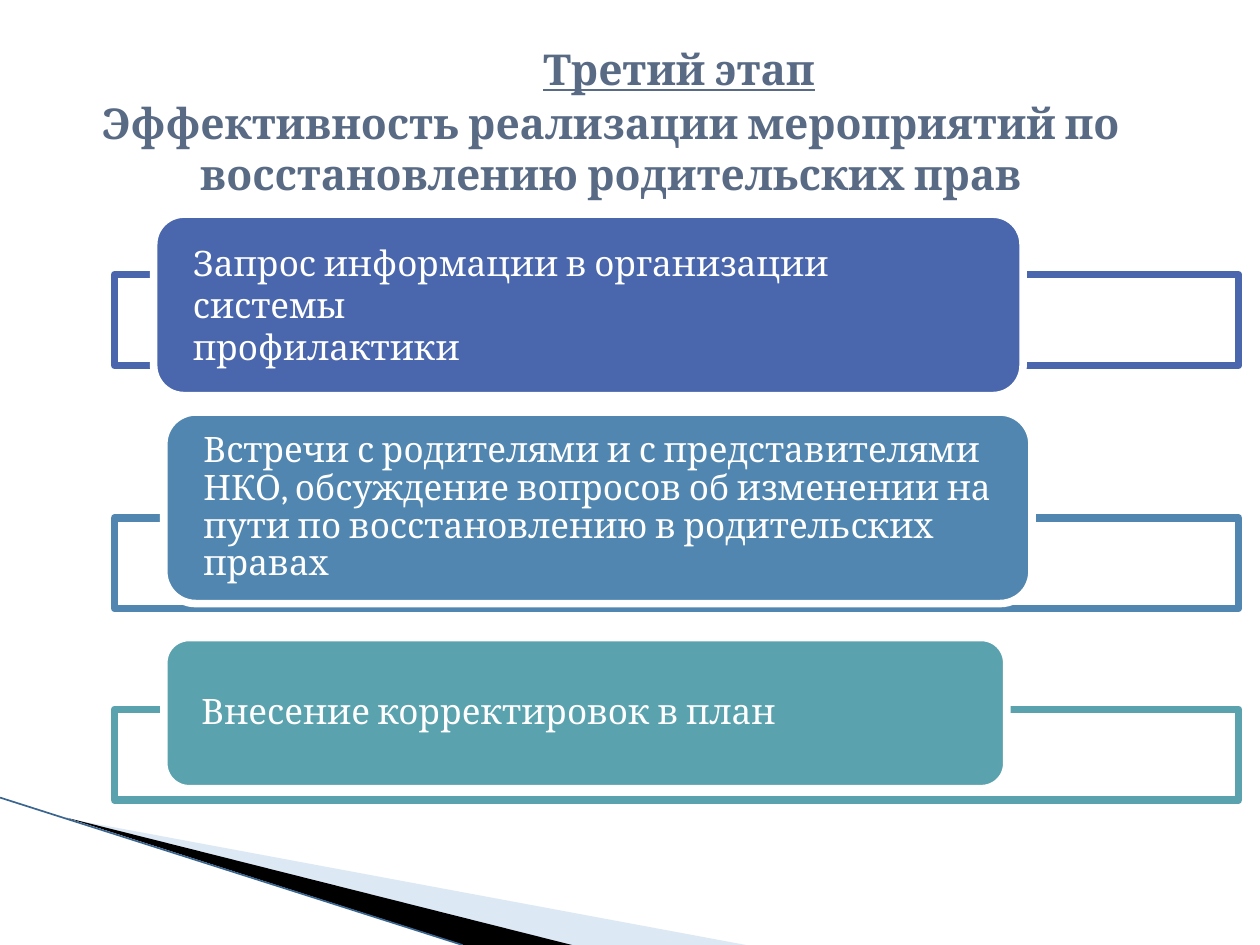
from lxml import etree
from pptx import Presentation, util as u
from pptx.dml.color import RGBColor
from pptx.enum import shapes, text
from pptx.oxml import ns

INK, WHITE = "596A85", "FFFFFF"
CARDS = [
    # colour, frame top, card box, line spacing, paragraphs
    ("4A66AC", 2.18, (1.22, 1.7, 6.9, 1.44), 1.0,
     ["Запрос информации в организации системы", "профилактики"]),
    ("5086AF", 4.11, (1.3, 3.27, 6.89, 1.52), 0.9,
     ["Встречи с родителями и с представителями НКО, обсуждение вопросов "
      "об изменении на пути по восстановлению в родительских правах"]),
    ("5AA2AE", 5.63, (1.3, 5.06, 6.69, 1.2), 0.9,
     ["Внесение корректировок в план"]),
]


def rgb(code):
    return RGBColor.from_string(code)


def assign(obj, vals):
    for key, val in vals.items():
        setattr(obj, key, val)


class Deck:
    """Holds the style and the current slide."""
    font = "Cambria"
    rim = 4.33

    def __init__(self, wide, high):
        self.prs = Presentation()
        assign(self.prs, {"slide_width": u.Inches(wide),
                          "slide_height": u.Inches(high)})
        self.slide = self.prs.slides.add_slide(self.prs.slide_layouts[6])
        self.items = self.slide.shapes

    def paint(self, shape, fill, line=None, alpha=None):
        """Set fill, outline and opacity (percent), without a shadow."""
        shape.shadow.inherit = False
        shape.fill.solid()
        shape.fill.fore_color.rgb = rgb(fill)
        if alpha:
            tone = shape.fill._xPr.find(".//" + ns.qn("a:srgbClr"))
            etree.SubElement(tone, ns.qn("a:alpha"), val=str(alpha * 1000))
        if line:
            shape.line.color.rgb = rgb(line)
            shape.line.width = u.Pt(self.rim)
        else:
            shape.line.fill.background()

    def wedge(self, points, fill, alpha=None):
        pts = [(u.Inches(x), u.Inches(y)) for x, y in points]
        pen = self.items.build_freeform(*pts[0])
        pen.add_line_segments(pts[1:], close=True)
        self.paint(pen.convert_to_shape(), fill, alpha=alpha)

    def line(self, ends, color, width):
        rule = self.items.add_connector(
            shapes.MSO_CONNECTOR.STRAIGHT, *map(u.Inches, ends))
        rule.line.color.rgb = rgb(color)
        rule.line.width = u.Pt(width)
        etree.SubElement(rule._element.spPr, ns.qn("a:effectLst"))

    def block(self, kind, box, fill, line, alpha=None):
        shape = self.items.add_shape(kind, *map(u.Inches, box))
        self.paint(shape, fill, line, alpha)
        return shape

    def label(self, frame, paras, side, anchor, form, style, color):
        """Fill a text frame; form goes to paragraphs, style to fonts."""
        assign(frame, {"word_wrap": True, "vertical_anchor": anchor,
                       "margin_left": u.Inches(side),
                       "margin_right": u.Inches(side),
                       "margin_top": 0, "margin_bottom": 0})
        for num, words in enumerate(paras):
            para = frame.add_paragraph() if num else frame.paragraphs[0]
            run = para.add_run()
            run.text = words
            assign(para, form)
            assign(run.font, {"name": self.font, **style})
            run.font.color.rgb = rgb(color)
        return frame.paragraphs

    def title(self, box, paras, shift):
        """Add the heading; shift indents its underlined first line."""
        frame = self.items.add_textbox(*map(u.Inches, box)).text_frame
        first, second = self.label(
            frame, paras, 0.1, text.MSO_ANCHOR.TOP,
            {"alignment": text.PP_ALIGN.CENTER},
            {"size": u.Pt(24.3), "bold": True}, INK)
        first.runs[0].font.underline = True
        first._p.get_or_add_pPr().set("marL", str(u.Inches(shift)))
        second.space_before = u.Pt(2)

    def card(self, color, top, box, gap, paras):
        kind = shapes.MSO_SHAPE
        self.block(kind.RECTANGLE, (0.91, top, 8.92, 0.72), WHITE, color, 90)
        shape = self.block(kind.ROUNDED_RECTANGLE, box, color, WHITE)
        self.label(shape.text_frame, paras, 0.24, text.MSO_ANCHOR.MIDDLE,
                   {"alignment": text.PP_ALIGN.LEFT, "line_spacing": gap},
                   {"size": u.Pt(20)}, WHITE)


def main():
    deck = Deck(10, 7.5)
    deck.wedge([(0.55, 6.5), (5.92, 7.5), (4.53, 7.5)], "ABC6E6", 40)
    deck.wedge([(0.53, 6.49), (4.54, 7.5), (3.68, 7.5)], "000000")
    deck.line((0, 6.33, 3.67, 7.5), "3A658F", 0.95)
    deck.title((0.35, 0.34, 9, 1.34),
               ["Третий этап", "Эффективность реализации мероприятий по "
                "восстановлению родительских прав"], 1.08)
    for card in CARDS:
        deck.card(*card)
    deck.prs.save("out.pptx")


if __name__ == "__main__":
    main()
